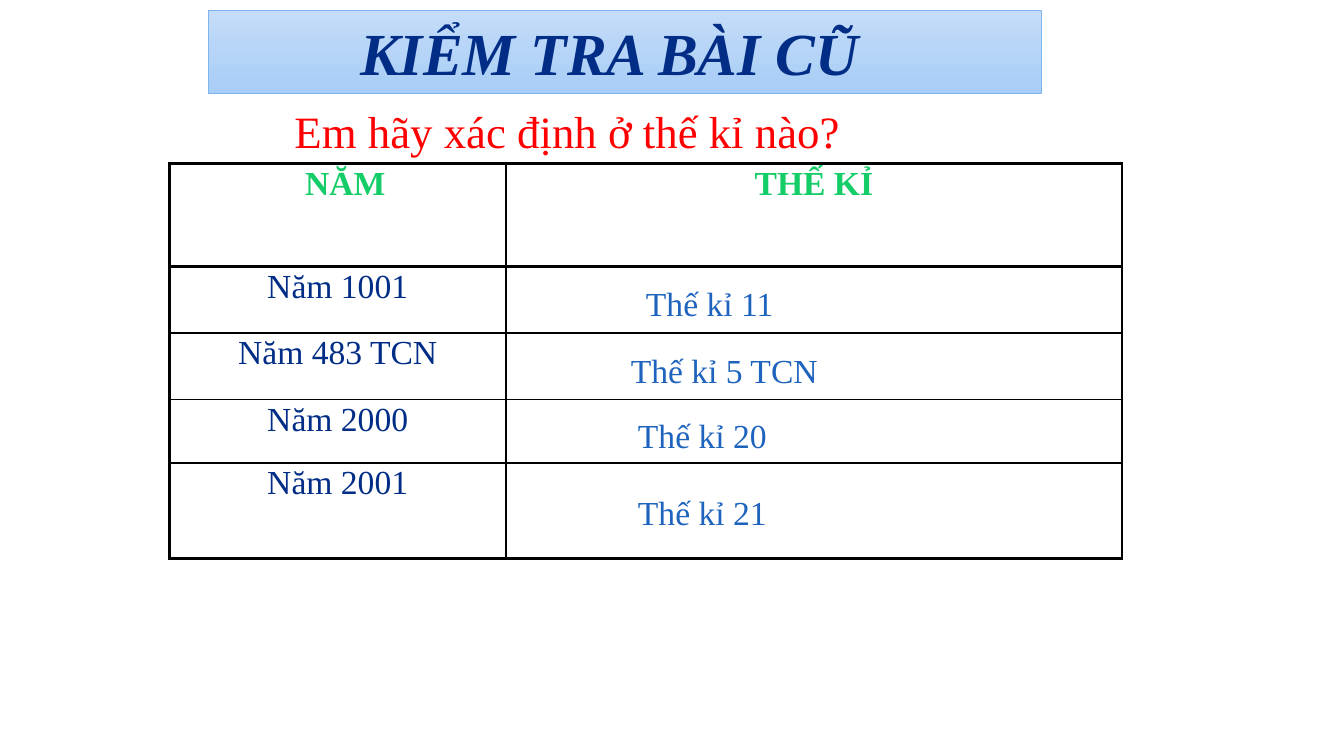
from pptx import Presentation
from pptx.util import Pt
from pptx.dml.color import RGBColor as RGB
from pptx.enum.shapes import MSO_SHAPE as Kind
from pptx.enum.text import PP_ALIGN as Align, MSO_ANCHOR as Anchor
from pptx.oxml import parse_xml
from pptx.oxml.ns import nsdecls

HUES = {"ink": "000000", "white": "FFFFFF", "red": "FF0000", "green": "14CD68",
        "navy": "012D86", "blue": "1E63BD", "edge": "7DB6EF",
        "pale": "C4DCF8", "sky": "A8CDF7"}
THICK, THIN = 2.25, 1


class Board:
    font = "Times New Roman"

    def __init__(self, deck):
        self.slide = deck.slides.add_slide(deck.slide_layouts[6])

    def hue(self, name):
        return RGB.from_string(HUES[name])

    def label(self, frame, text, color, align=Align.LEFT, **form):
        para = frame.paragraphs[0]
        para.alignment = align
        run = para.add_run()
        run.text = text
        for key, val in {"name": self.font, "size": Pt(24), **form}.items():
            setattr(run.font, key, val)
        run.font.color.rgb = self.hue(color)
        return para

    def box(self, area, text, color, inset=None, **form):
        shape = self.slide.shapes.add_shape(Kind.RECTANGLE, *map(Pt, area))
        shape.shadow.inherit = False
        shape.fill.solid()
        shape.fill.fore_color.rgb = self.hue("white")
        shape.line.fill.background()
        frame = shape.text_frame
        frame.word_wrap = True
        frame.vertical_anchor = Anchor.TOP
        for side, val in (inset or {}).items():
            setattr(frame, "margin_" + side, Pt(val))
        self.label(frame, text, color, **form)
        return shape

    def banner(self, area, text, color, **form):
        shape = self.box(area, text, color, align=Align.CENTER, **form)
        shape.fill.gradient()
        shape.fill.gradient_angle = 270
        for stop, name in zip(shape.fill.gradient_stops, ("pale", "sky")):
            stop.color.rgb = self.hue(name)
        shape.line.color.rgb = self.hue("edge")
        shape.line.width = Pt(0.5)

    def edges(self, cell, widths):
        props = cell._tc.get_or_add_tcPr()
        for spot, (side, width) in enumerate(zip("LRTB", widths)):
            props.insert(spot, parse_xml(
                f'<a:ln{side} {nsdecls("a")} w="{Pt(width)}"><a:solidFill>'
                f'<a:srgbClr val="{HUES["ink"]}"/></a:solidFill></a:ln{side}>'))

    def table(self, left, top, cols, rows, texts, color, **form):
        frame = self.slide.shapes.add_table(
            len(rows), len(cols), *map(Pt, (left, top, sum(cols), sum(rows))))
        grid = frame.table
        grid.first_row = grid.horz_banding = False
        for col, width in zip(grid.columns, cols):
            col.width = Pt(width)
        for r, (row, high) in enumerate(zip(grid.rows, rows)):
            row.height = Pt(high)
            for c, cell in enumerate(row.cells):
                cell.fill.solid()
                cell.fill.fore_color.rgb = self.hue("white")
                outer = (c == 0, c == len(cols) - 1, r == 0, r == len(rows) - 1)
                self.edges(cell, [THICK if out else THIN for out in outer])
                if texts[r][c]:
                    para = self.label(cell.text_frame, texts[r][c], color,
                                      Align.CENTER, **form)
                    para.line_spacing = 0.9
                    para.space_before = Pt(10)
        return grid


def main():
    deck = Presentation()
    deck.slide_width, deck.slide_height = Pt(960), Pt(540)
    board = Board(deck)

    # Question
    board.box((163.4, 68.4, 523.4, 46), "Em hãy xác định ở thế kỉ nào?", "red",
              {"left": 47, "top": 6}, size=Pt(32))

    # Year and century table: heading, then body
    left, top, cols = 121, 116.6, (240.4, 440)
    head = board.table(left, top, cols, [74], [("NĂM", "THẾ KỈ")], "green", bold=True)
    head.cell(0, 0).margin_left = Pt(18)
    years = ("Năm 1001", "Năm 483 TCN", "Năm 2000", "Năm 2001")
    board.table(left, 190.4, cols, (47.5, 47.5, 45.4, 68.4),
                [(year, "") for year in years], "navy")

    # Answers
    for x, y, text, pad in ((454.3, 198.7, "Thế kỉ 11", 7.2),
                            (437, 246.2, "Thế kỉ 5 TCN", 13.6),
                            (448.6, 293, "Thế kỉ 20", 7.2),
                            (448.6, 347.8, "Thế kỉ 21", 7.2)):
        board.box((x, y, 212.4, 36), text, "blue", {"left": pad})

    # Title
    board.banner((149, 7.6, 594.7, 59.3), "KIỂM TRA BÀI CŨ", "navy",
                 inset={"right": 29}, size=Pt(42.6), bold=True, italic=True)

    deck.save("out.pptx")


if __name__ == "__main__":
    main()
